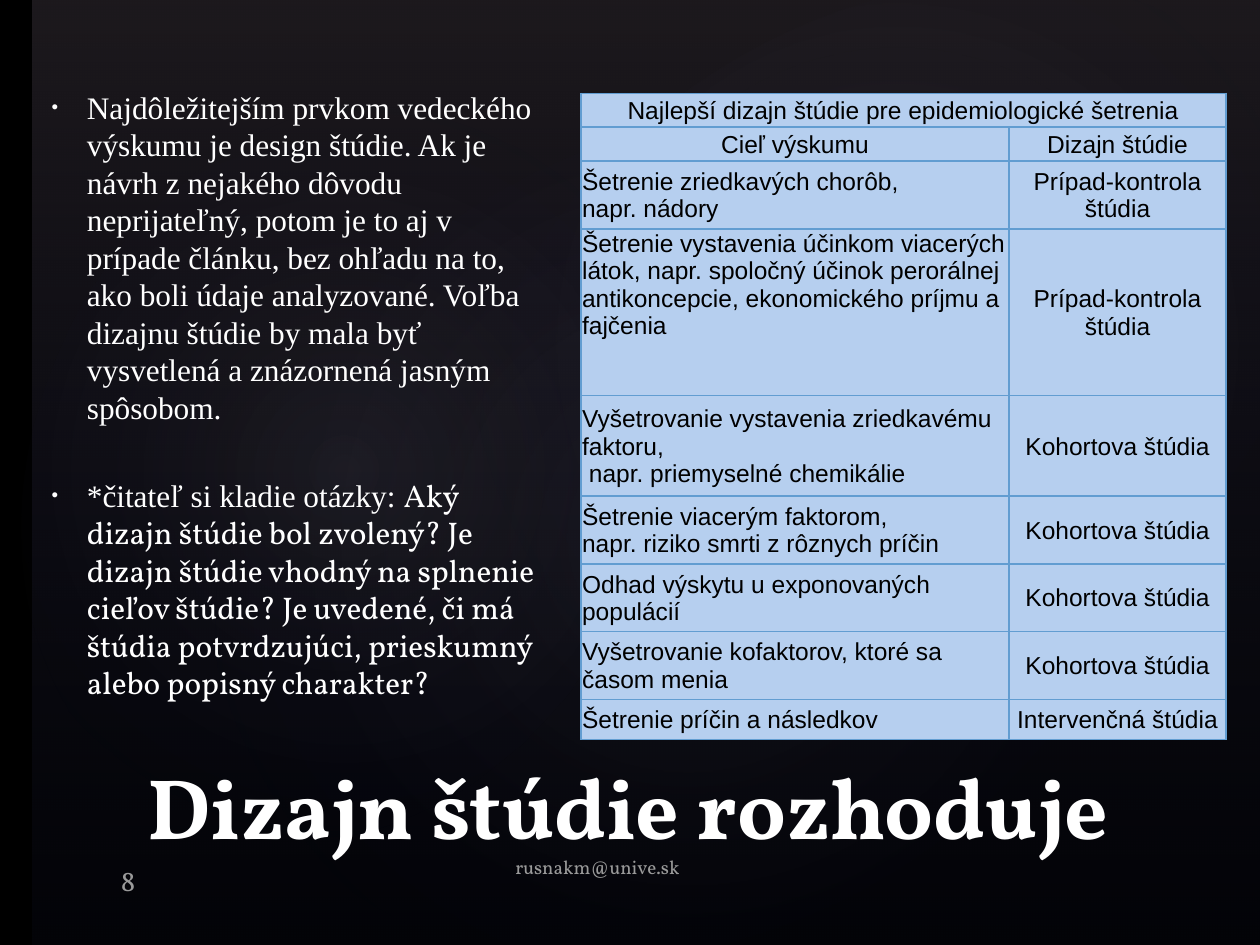
from collections import namedtuple

from lxml.etree import SubElement
from pptx import Presentation
from pptx.dml.color import RGBColor
from pptx.enum.shapes import MSO_SHAPE
from pptx.enum.text import MSO_ANCHOR, MSO_AUTO_SIZE, PP_ALIGN
from pptx.oxml.ns import qn
from pptx.util import Inches, Pt

Box = namedtuple("Box", "left top width height")

SLIDE_WIDTH, SLIDE_HEIGHT = Inches(10), Inches(7.5)
UNIT = SLIDE_WIDTH / 100

WHITE = RGBColor(0xFF, 0xFF, 0xFF)
BLACK = RGBColor(0, 0, 0)
GREY = RGBColor(0x9A, 0x9A, 0x9A)
CELL_BLUE = RGBColor(0xB6, 0xCF, 0xEF)
BORDER_BLUE = RGBColor(0x62, 0x9D, 0xD1)
SLATE = RGBColor(0x50, 0x46, 0x52)
NAVY = RGBColor(0x24, 0x28, 0x52)
MAUVE = RGBColor(0xC4, 0xBC, 0xC6)

SERIF, SANS, DISPLAY = "Times New Roman", "Arial", "Vollkorn"

GLOWS = [
    (Box(15, 11.4, 79.2, 62.4), 328.7, 7),
    (Box(-3, 12.8, 60.6, 49), 294.3, 8),
    (Box(35.8, 1.3, 70.9, 52), 328.7, 8),
]

BODY = [
    [("Najdôležitejším prvkom vedeckého výskumu je design štúdie. Ak je návrh z nejakého "
      "dôvodu neprijateľný, potom je to aj v prípade článku, bez ohľadu na to, ako boli údaje "
      "analyzované. Voľba dizajnu štúdie by mala byť vysvetlená a znázornená jasným spôsobom.",
      SERIF)],
    [("*čitateľ si kladie otázky: ", SERIF),
     ("Aký dizajn štúdie bol zvolený? Je dizajn štúdie vhodný na splnenie cieľov štúdie? "
      "Je uvedené, či má štúdia potvrdzujúci, prieskumný alebo popisný charakter?", DISPLAY)],
]

TABLE_TITLE = "Najlepší dizajn štúdie pre epidemiologické šetrenia"
CASE_CONTROL, COHORT = "Prípad-kontrola štúdia", "Kohortova štúdia"
TABLE_ROWS = [
    (TABLE_TITLE, ""),
    ("Cieľ výskumu", "Dizajn štúdie"),
    ("Šetrenie zriedkavých chorôb,\vnapr. nádory", CASE_CONTROL),
    ("Šetrenie vystavenia účinkom viacerých látok, napr. spoločný účinok perorálnej "
     "antikoncepcie, ekonomického príjmu a fajčenia", CASE_CONTROL),
    ("Vyšetrovanie vystavenia zriedkavému faktoru,\v napr. priemyselné chemikálie", COHORT),
    ("Šetrenie viacerým faktorom,\vnapr. riziko smrti z rôznych príčin", COHORT),
    ("Odhad výskytu u exponovaných populácií", COHORT),
    ("Vyšetrovanie kofaktorov, ktoré sa časom menia", COHORT),
    ("Šetrenie príčin a následkov", "Intervenčná štúdia"),
]
ROW_SHARES = [0.27, 0.27, 0.54, 1.33, 0.8, 0.54, 0.54, 0.54, 0.32]
COLUMN_SHARES = [3.4, 1.72]
HEADER_ROWS, TOP_ROW = 2, 3


def to_lengths(box):
    """Turn a box in grid units into slide lengths."""
    return [round(value * UNIT) for value in box]


def write(paragraph, text, font=DISPLAY, size=14, color=WHITE, bold=False, align=PP_ALIGN.LEFT):
    """Add formatted text to a paragraph."""
    paragraph.alignment = align
    first = len(paragraph.runs)
    for position, line in enumerate(text.split("\v")):
        if position:
            paragraph.add_line_break()
        paragraph.add_run().text = line
    for run in paragraph.runs[first:]:
        run.font.name, run.font.size, run.font.bold = font, Pt(size), bold
        run.font.color.rgb = color


def set_frame(shape, box, anchor, top=0.06, bottom=0.06):
    """Place a text shape and return its prepared frame."""
    shape.left, shape.top, shape.width, shape.height = to_lengths(box)
    frame = shape.text_frame
    frame.word_wrap, frame.auto_size = True, MSO_AUTO_SIZE.NONE
    frame.vertical_anchor = anchor
    frame.margin_left = frame.margin_right = Inches(0.11)
    frame.margin_top, frame.margin_bottom = Inches(top), Inches(bottom)
    return frame


def add_gradient(slide, preset, box, stops, layer, rotation=0, radial=False):
    """Add a transparent gradient shape at a given layer behind the text."""
    shape = slide.shapes.add_shape(preset, *to_lengths(box))
    shape.shadow.inherit = False
    shape.rotation = rotation
    shape.line.fill.background()
    shape.fill.gradient()
    fill = shape._element.spPr.find(qn("a:gradFill"))
    for child in list(fill):
        fill.remove(child)
    stop_list = SubElement(fill, qn("a:gsLst"))
    for position, color, alpha in stops:
        stop = SubElement(stop_list, qn("a:gs"), pos=str(position * 1000))
        tint = SubElement(stop, qn("a:srgbClr"), val=str(color))
        SubElement(tint, qn("a:alpha"), val=str(alpha * 1000))
    if radial:
        center = SubElement(fill, qn("a:path"), **{"path": "circle"})
        SubElement(center, qn("a:fillToRect"), l="50000", t="50000", r="50000", b="50000")
    else:
        SubElement(fill, qn("a:lin"), ang="5400000", scaled="0")
    slide.shapes._spTree.insert(2 + layer, shape._element)


def add_backdrop(slide, box):
    """Paint the dark background with its veil and glows."""
    slide.background.fill.solid()
    slide.background.fill.fore_color.rgb = BLACK
    add_gradient(slide, MSO_SHAPE.RECTANGLE, box, [(0, SLATE, 36), (100, NAVY, 10)], 0)
    for layer, (glow, rotation, alpha) in enumerate(GLOWS, 1):
        stops = [(0, MAUVE, alpha), (58, NAVY, 0)]
        add_gradient(slide, MSO_SHAPE.OVAL, glow, stops, layer, rotation, True)


def add_body(slide, box):
    """Fill the body placeholder with the bulleted paragraphs."""
    frame = set_frame(slide.placeholders[1], box, MSO_ANCHOR.TOP, top=0.7)
    for position, pieces in enumerate(BODY):
        paragraph = frame.add_paragraph() if position else frame.paragraphs[0]
        paragraph.line_spacing = Pt(21.4)
        paragraph.space_before = Pt(29 if position else 0)
        for text, font in pieces:
            write(paragraph, text, font=font, size=17.9)
        properties = paragraph._p.get_or_add_pPr()
        properties.set("marL", str(Inches(0.3)))
        properties.set("indent", str(Inches(-0.28)))
        SubElement(properties, qn("a:buSzPct"), val="60000")
        SubElement(properties, qn("a:buFont"), typeface=SANS)
        SubElement(properties, qn("a:buChar"), char="•")


def add_title(slide, box):
    """Fill the title placeholder."""
    frame = set_frame(slide.shapes.title, box, MSO_ANCHOR.BOTTOM)
    write(frame.paragraphs[0], "Dizajn štúdie rozhoduje", size=49, bold=True)


def add_label(slide, box, text, size, anchor, bottom=0.06):
    """Add a grey footer text."""
    shape = slide.shapes.add_textbox(*to_lengths(box))
    frame = set_frame(shape, box, anchor, bottom=bottom)
    write(frame.paragraphs[0], text, size=size, color=GREY)


def format_cell(cell, text, align, anchor):
    """Write one table cell with its borders and fill."""
    cell.margin_left = cell.margin_right = cell.margin_top = Inches(0.01)
    cell.margin_bottom = 0
    cell.vertical_anchor = anchor
    properties = cell._tc.get_or_add_tcPr()
    for side in ("lnL", "lnR", "lnT", "lnB"):
        line = SubElement(properties, qn(f"a:{side}"), w=str(Pt(1)))
        paint = SubElement(line, qn("a:solidFill"))
        SubElement(paint, qn("a:srgbClr"), val=str(BORDER_BLUE))
    cell.fill.solid()
    cell.fill.fore_color.rgb = CELL_BLUE
    if text:
        write(cell.text_frame.paragraphs[0], text, font=SANS, color=BLACK, align=align)


def add_design_table(slide, box):
    """Add the table of research aims and study designs."""
    lengths = to_lengths(box)
    table = slide.shapes.add_table(len(TABLE_ROWS), len(COLUMN_SHARES), *lengths).table
    table.first_row = table.horz_banding = False
    for column, share in zip(table.columns, COLUMN_SHARES):
        column.width = round(lengths[2] * share / sum(COLUMN_SHARES))
    for row, share in zip(table.rows, ROW_SHARES):
        row.height = round(lengths[3] * share / sum(ROW_SHARES))
    for row, texts in enumerate(TABLE_ROWS):
        for column, text in enumerate(texts):
            centred = column == 1 or row < HEADER_ROWS
            at_top = column == 0 and row == TOP_ROW
            format_cell(table.cell(row, column), text,
                        PP_ALIGN.CENTER if centred else PP_ALIGN.LEFT,
                        MSO_ANCHOR.TOP if at_top else MSO_ANCHOR.MIDDLE)
    table.cell(0, 0).merge(table.cell(0, 1))


def main():
    """Build and save the slide."""
    presentation = Presentation()
    presentation.slide_width, presentation.slide_height = SLIDE_WIDTH, SLIDE_HEIGHT
    slide = presentation.slides.add_slide(presentation.slide_layouts[1])
    add_backdrop(slide, Box(2.6, 0, 97.4, 75))
    add_body(slide, Box(2.8, 0, 41.7, 75))
    add_title(slide, Box(10.6, 58.6, 82.5, 10))
    add_label(slide, Box(8.5, 67.9, 8.2, 3.4), "8", 16.3, MSO_ANCHOR.BOTTOM, bottom=0.01)
    add_label(slide, Box(39.8, 67.3, 22.3, 4), "rusnakm@unive.sk", 10.9, MSO_ANCHOR.TOP)
    add_design_table(slide, Box(46.1, 7.4, 51.2, 51.3))
    presentation.save("out.pptx")


if __name__ == "__main__":
    main()
